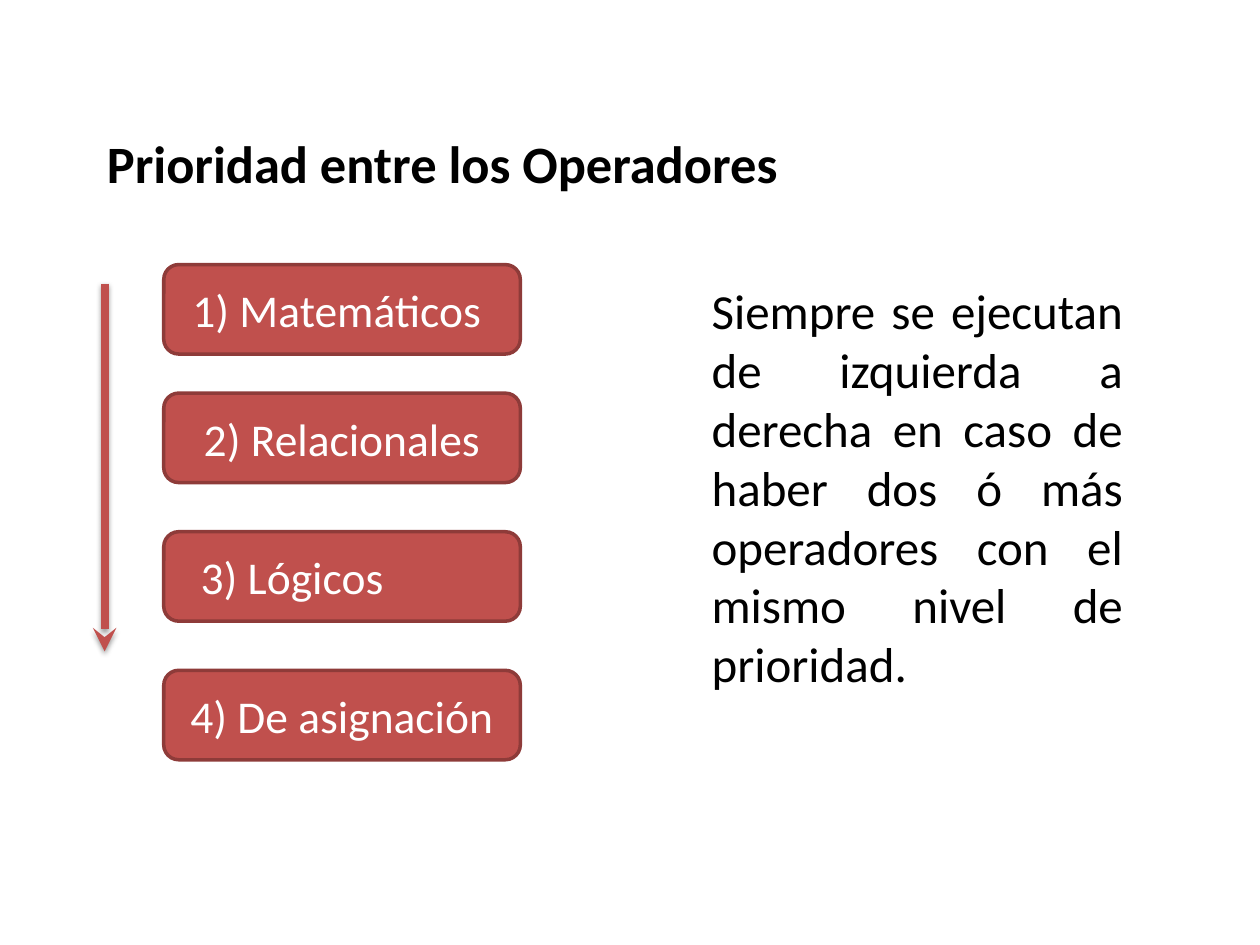
from lxml.etree import SubElement
from pptx import Presentation
from pptx.dml.color import RGBColor
from pptx.enum.shapes import MSO_CONNECTOR as Connector, MSO_SHAPE as Shape
from pptx.enum.text import MSO_ANCHOR as Anchor, MSO_AUTO_SIZE as AutoSize, PP_ALIGN as Align
from pptx.oxml.ns import qn
from pptx.util import Inches, Pt

COLORS = {"text": "000000", "label": "FFFFFF", "level": "C0504D",
          "border": "8E3B39", "shadow": "000000"}
FONT = "Calibri"

# Label, top, alignment and left indent of each priority level
LEVELS = [
    ("1) Matemáticos ", 2.1, Align.CENTER, 0),
    ("2) Relacionales", 3.12, Align.CENTER, 0),
    ("3) Lógicos", 4.22, Align.LEFT, 0.16),
    ("4) De asignación", 5.32, Align.CENTER, 0),
]
RULE = ("Siempre se ejecutan de izquierda a derecha en caso de haber dos ó más "
        "operadores con el mismo nivel de prioridad.")


def color(key):
    return RGBColor.from_string(COLORS[key])


def write(frame, text, size, ink, align, bold=False, indent=0, first_line=0):
    frame.word_wrap = True
    paragraph = frame.paragraphs[0]
    paragraph.alignment = align
    if indent:
        properties = paragraph._p.get_or_add_pPr()
        properties.set("marL", str(Inches(indent)))
        properties.set("indent", str(Inches(first_line)))
    run = paragraph.add_run()
    run.text = text
    for name, value in {"name": FONT, "size": Pt(size), "bold": bold}.items():
        setattr(run.font, name, value)
    run.font.color.rgb = color(ink)


def add_text(slide, box, text, size, **style):
    frame = slide.shapes.add_textbox(*map(Inches, box)).text_frame
    frame.auto_size = AutoSize.SHAPE_TO_FIT_TEXT
    write(frame, text, size, "text", Align.JUSTIFY, **style)


def add_level(slide, label, top, align, indent):
    level = slide.shapes.add_shape(
        Shape.ROUNDED_RECTANGLE, *map(Inches, (1.3, top, 2.83, 0.71)))
    level.shadow.inherit = False
    level.fill.solid()
    level.fill.fore_color.rgb = color("level")
    level.line.color.rgb = color("border")
    level.line.width = Pt(2)
    level.text_frame.vertical_anchor = Anchor.MIDDLE
    write(level.text_frame, label, 26, "label", align, indent=indent)


def add_priority_arrow(slide, x, top, bottom):
    arrow = slide.shapes.add_connector(
        Connector.STRAIGHT, *map(Inches, (x, top, x, bottom)))
    arrow.line.color.rgb = color("level")
    arrow.line.width = Pt(4.5)
    SubElement(arrow.line._get_or_add_ln(), qn("a:tailEnd"), type="stealth")
    # Soft shadow falling straight down
    effects = SubElement(arrow._element.spPr, qn("a:effectLst"))
    shadow = SubElement(effects, qn("a:outerShdw"), blurRad=str(Pt(3.1)),
                        dist=str(Pt(1.6)), dir="5400000", rotWithShape="0")
    tint = SubElement(shadow, qn("a:srgbClr"), val=COLORS["shadow"])
    SubElement(tint, qn("a:alpha"), val="38000")


def main():
    deck = Presentation()
    deck.slide_width, deck.slide_height = Inches(10), Inches(7.5)
    slide = deck.slides.add_slide(deck.slide_layouts[6])

    # Heading
    add_text(slide, (0.75, 0.99, 7.87, 0.61), "Prioridad entre los Operadores",
             30, bold=True, indent=0.5, first_line=-0.5)

    # Priority levels, highest first
    for level in LEVELS:
        add_level(slide, *level)

    # Tie-breaking rule
    add_text(slide, (5.55, 2.18, 3.46, 3.4), RULE, 28)

    # Direction of decreasing priority
    add_priority_arrow(slide, 0.83, 2.25, 5.17)

    deck.save("out.pptx")


if __name__ == "__main__":
    main()
